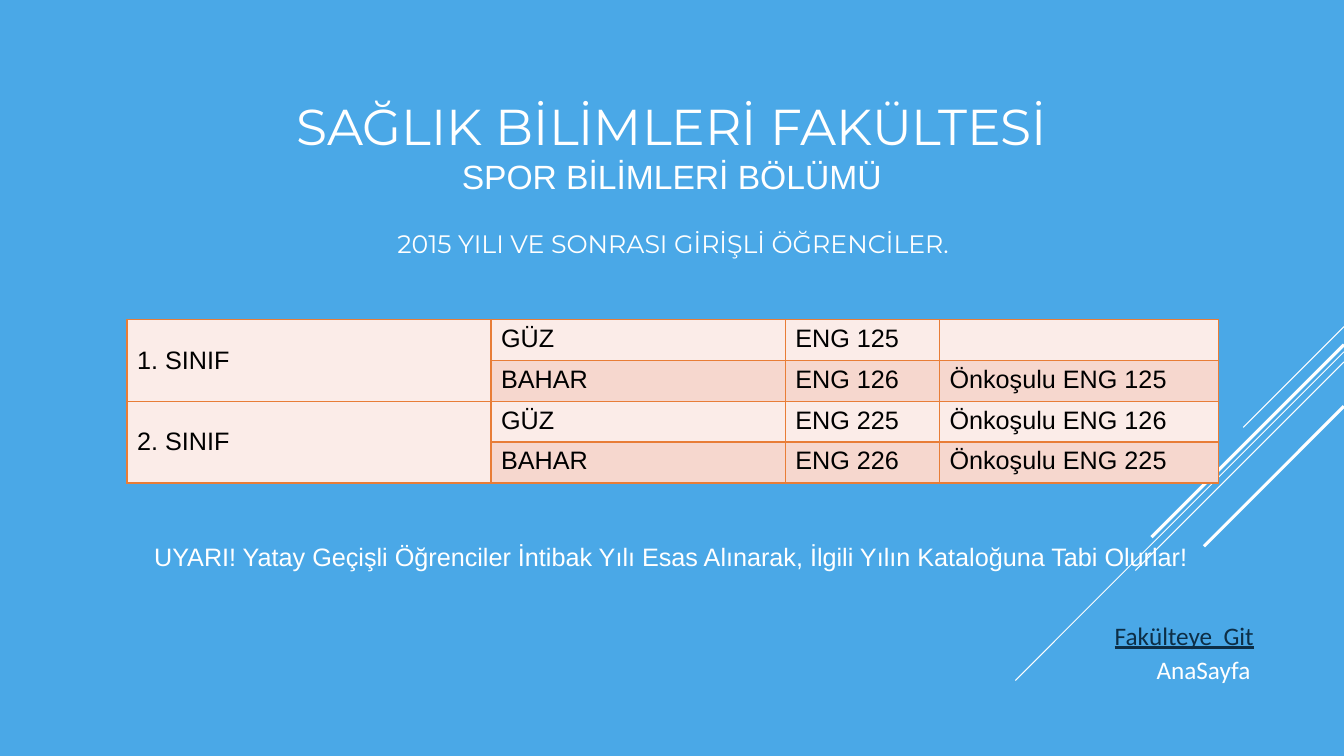
from typing import NamedTuple

from lxml import etree
from pptx import Presentation
from pptx.dml.color import RGBColor
from pptx.enum.shapes import MSO_CONNECTOR
from pptx.enum.text import MSO_ANCHOR, PP_ALIGN
from pptx.oxml.ns import qn
from pptx.slide import Slide
from pptx.table import _Cell
from pptx.text.text import TextFrame
from pptx.util import Pt

STRAIGHT = MSO_CONNECTOR.STRAIGHT
TOP, MIDDLE = MSO_ANCHOR.TOP, MSO_ANCHOR.MIDDLE
LEFT, CENTER = PP_ALIGN.LEFT, PP_ALIGN.CENTER
WIDTH, HEIGHT = 960, 540
WHITE, BLACK, NAVY = "FFFFFF", "000000", "0D2E46"
BLUE, ORANGE, PALE, ROSE = "4AA8E7", "E87D37", "FBECE8", "F6D7CE"


class Ray(NamedTuple):
    top: float
    reach: float
    weight: float


class Row(NamedTuple):
    text: str
    size: float = 18
    font: str = "Arial"


class Label(NamedTuple):
    left: float
    top: float
    width: float
    height: float
    rows: list[Row]
    align: PP_ALIGN = LEFT
    anchor: MSO_ANCHOR = TOP
    color: str = WHITE
    under: bool = False
    wrap: bool = True


RAYS = [
    Ray(233.3, 72, 0.75),
    Ray(251.3, 234.7, 0.75),
    Ray(258.5, 149, 0.75),
    Ray(246.2, 137.5, 2.25),
    Ray(290.2, 100, 2.25),
]
LABELS = [
    Label(90, 49, 779.8, 110.2,
          [Row("SAĞLIK BİLİMLERİ FAKÜLTESİ", 36, "Montserrat"),
           Row("SPOR BİLİMLERİ BÖLÜMÜ", 24)], CENTER, MIDDLE),
    Label(103, 383, 754.6, 29,
          [Row("UYARI! Yatay Geçişli Öğrenciler İntibak Yılı Esas Alınarak, "
               "İlgili Yılın Kataloğuna Tabi Olurlar!")]),
    Label(814.3, 463.7, 90.7, 29, [Row("AnaSayfa", font="Calibri")], CENTER),
    Label(170.6, 159.8, 620.6, 29,
          [Row("2015 YILI VE SONRASI GİRİŞLİ ÖĞRENCİLER.", font="Montserrat")],
          CENTER),
    Label(789.1, 439.2, 116.6, 29, [Row("Fakülteye  Git", font="Calibri")],
          color=NAVY, under=True, wrap=False),
]
COLS = [260, 210.2, 110.2, 199.4]
DEPTH = 29.2
COURSES = [
    ["1. SINIF", "GÜZ", "ENG 125", ""],
    ["", "BAHAR", "ENG 126", "Önkoşulu ENG 125"],
    ["2. SINIF", "GÜZ", "ENG 225", "Önkoşulu ENG 126"],
    ["", "BAHAR", "ENG 226", "Önkoşulu ENG 225"],
]


def paint(tone: str) -> RGBColor:
    return RGBColor.from_string(tone)


def write(frame: TextFrame, rows: list[Row], *, align: PP_ALIGN = LEFT,
          color: str = WHITE, under: bool = False) -> None:
    para = frame.paragraphs[0]
    para.alignment = align
    for i, row in enumerate(rows):
        if i:
            para.add_line_break()
        run = para.add_run()
        run.text = row.text
        run.font.size = Pt(row.size)
        run.font.name = row.font
        run.font.color.rgb = paint(color)
        run.font.underline = under


def add_ray(slide: Slide, ray: Ray) -> None:
    line = slide.shapes.add_connector(
        STRAIGHT, Pt(WIDTH), Pt(ray.top),
        Pt(WIDTH - ray.reach), Pt(ray.top + ray.reach))
    line.line.color.rgb = paint(WHITE)
    line.line.width = Pt(ray.weight)
    etree.SubElement(line._element.spPr, qn("a:effectLst"))


def add_label(slide: Slide, label: Label) -> None:
    box = slide.shapes.add_textbox(
        Pt(label.left), Pt(label.top), Pt(label.width), Pt(label.height))
    frame = box.text_frame
    frame.word_wrap = label.wrap
    frame.vertical_anchor = label.anchor
    write(frame, label.rows, align=label.align, color=label.color,
          under=label.under)


def add_edges(cell: _Cell) -> None:
    props = cell._tc.get_or_add_tcPr()
    for i, side in enumerate(("lnL", "lnR", "lnT", "lnB")):
        edge = etree.Element(qn(f"a:{side}"), w=str(Pt(1)))
        fill = etree.SubElement(edge, qn("a:solidFill"))
        etree.SubElement(fill, qn("a:srgbClr"), val=ORANGE)
        props.insert(i, edge)


def add_grid(slide: Slide) -> None:
    grid = slide.shapes.add_table(
        len(COURSES), len(COLS), Pt(90.7), Pt(228.2),
        Pt(sum(COLS)), Pt(DEPTH * len(COURSES))).table
    grid.first_row = False
    grid.horz_banding = False
    for col, width in zip(grid.columns, COLS):
        col.width = Pt(width)
    for r, texts in enumerate(COURSES):
        grid.rows[r].height = Pt(DEPTH)
        for c, text in enumerate(texts):
            cell = grid.cell(r, c)
            cell.fill.solid()
            cell.fill.fore_color.rgb = paint(ROSE if r % 2 and c else PALE)
            cell.vertical_anchor = TOP if c else MIDDLE
            add_edges(cell)
            if text:
                write(cell.text_frame, [Row(text)], color=BLACK)
    for r in range(0, len(COURSES), 2):
        grid.cell(r, 0).merge(grid.cell(r + 1, 0))


def main() -> None:
    deck = Presentation()
    deck.slide_width, deck.slide_height = Pt(WIDTH), Pt(HEIGHT)
    slide = deck.slides.add_slide(deck.slide_layouts[6])
    slide.background.fill.solid()
    slide.background.fill.fore_color.rgb = paint(BLUE)
    for ray in RAYS:
        add_ray(slide, ray)
    add_grid(slide)
    for label in LABELS:
        add_label(slide, label)
    deck.save("out.pptx")


if __name__ == "__main__":
    main()
